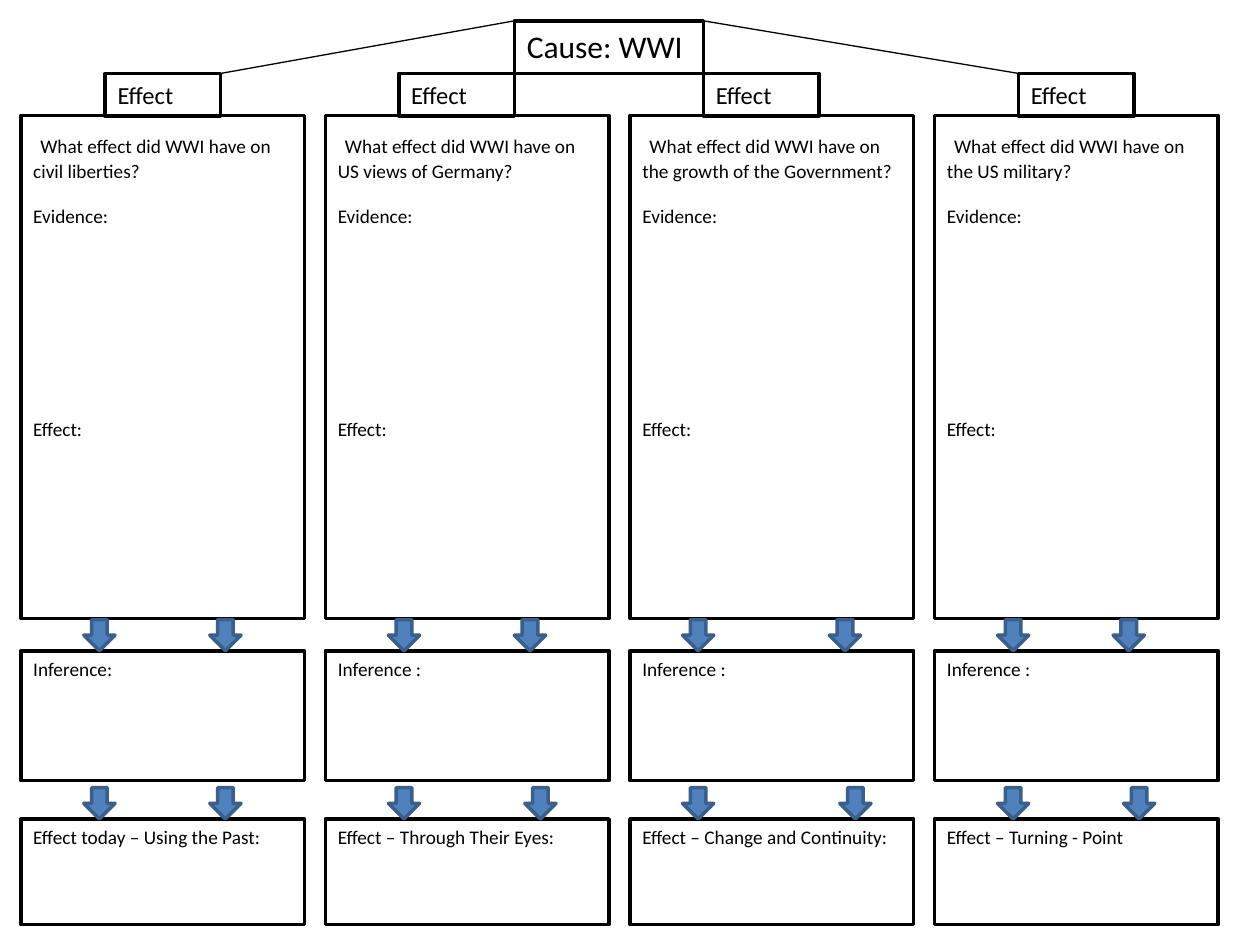
import pptx
import pptx.util
import pptx.dml.color
import pptx.enum.shapes
import pptx.enum.text
import pptx.oxml

Cm, Pt = pptx.util.Cm, pptx.util.Pt
SHAPE = pptx.enum.shapes.MSO_SHAPE

THEME = {
    "font": "Calibri", "ink": "000000", "paper": "FFFFFF",
    "arrow": "4F81BD", "arrow_edge": "3A5F8C",
    "title": 18, "tag": 14, "body": 11, "border": 2, "link": 0.75,
}

CAUSE = "Cause: WWI"
TAG = "Effect"
# Left edges of the tag and of the arrows above each lower box, in cm
COLUMNS = [
    {"question": "What effect did WWI have on civil liberties?",
     "inference": "Inference:", "outcome": "Effect today – Using the Past:",
     "tag": 2.12, "upper_arrows": (1.69, 4.23), "lower_arrows": (1.69, 4.23)},
    {"question": "What effect did WWI have on US views of Germany?",
     "inference": "Inference :", "outcome": "Effect – Through Their Eyes:",
     "tag": 8.04, "upper_arrows": (7.83, 10.37), "lower_arrows": (7.83, 10.58)},
    {"question": "What effect did WWI have on the growth of the Government?",
     "inference": "Inference :", "outcome": "Effect – Change and Continuity:",
     "tag": 14.18, "upper_arrows": (13.76, 16.72), "lower_arrows": (13.76, 16.93)},
    {"question": "What effect did WWI have on the US military?",
     "inference": "Inference :", "outcome": "Effect – Turning - Point",
     "tag": 20.53, "upper_arrows": (20.11, 22.44), "lower_arrows": (20.11, 22.65)},
]

MARGIN, COLUMN_STEP, COLUMN_WIDTH = 0.42, 6.14, 5.72
# Top and height of each row, in cm
QUESTION_ROW, INFERENCE_ROW, OUTCOME_ROW = (2.33, 10.14), (13.12, 2.62), (16.51, 2.13)
TAG_TOP, TAG_WIDTH, TAG_HEIGHT = 1.48, 2.33, 0.86
CAUSE_LEFT, CAUSE_TOP, CAUSE_WIDTH, CAUSE_HEIGHT = 10.37, 0.42, 3.81, 1.06
ARROW_SIZE = 0.63
EVIDENCE_GAP, EFFECT_GAP = 12.5, 108.5


def color(name):
    return pptx.dml.color.RGBColor.from_string(THEME[name])


def add_figure(kind, left, top, width, height, fill, edge):
    figure = slide.shapes.add_shape(kind, Cm(left), Cm(top), Cm(width), Cm(height))
    figure.shadow.inherit = False
    figure.fill.solid()
    figure.fill.fore_color.rgb = color(fill)
    figure.line.color.rgb = color(edge)
    figure.line.width = Pt(THEME["border"])
    return figure


def add_box(left, top, width, height, paragraphs):
    """Each paragraph is (space before in points, [(text, size name), ...])."""
    box = add_figure(SHAPE.RECTANGLE, left, top, width, height, "paper", "ink")
    frame = box.text_frame
    frame.word_wrap = True
    frame.vertical_anchor = pptx.enum.text.MSO_ANCHOR.TOP
    for index, (gap, spans) in enumerate(paragraphs):
        para = frame.add_paragraph() if index else frame.paragraphs[0]
        para.alignment = pptx.enum.text.PP_ALIGN.LEFT
        para.space_before = Pt(gap)
        for text, size in spans:
            span = para.add_run()
            span.text = text
            span.font.name = THEME["font"]
            span.font.size = Pt(THEME[size])
            span.font.color.rgb = color("ink")


def add_link(*ends):
    link = slide.shapes.add_connector(
        pptx.enum.shapes.MSO_CONNECTOR.STRAIGHT, *map(Cm, ends))
    link.line.color.rgb = color("ink")
    link.line.width = Pt(THEME["link"])
    properties = link._element.spPr
    properties.append(pptx.oxml.parse_xml(
        '<a:effectLst xmlns:a="http://schemas.openxmlformats.org/drawingml/2006/main"/>'))


deck = pptx.Presentation()
deck.slide_width, deck.slide_height = Cm(25.4), Cm(19.05)
slide = deck.slides.add_slide(deck.slide_layouts[6])

for index, column in enumerate(COLUMNS):
    left = MARGIN + index * COLUMN_STEP
    question = [
        (0, [(" ", "title"), (column["question"], "body")]),
        (EVIDENCE_GAP, [("Evidence:", "body")]),
        (EFFECT_GAP, [("Effect:", "body")]),
    ]
    for (top, height), paragraphs in (
        (QUESTION_ROW, question),
        (INFERENCE_ROW, [(0, [(column["inference"], "body")])]),
        (OUTCOME_ROW, [(0, [(column["outcome"], "body")])]),
    ):
        add_box(left, top, COLUMN_WIDTH, height, paragraphs)

add_box(CAUSE_LEFT, CAUSE_TOP, CAUSE_WIDTH, CAUSE_HEIGHT, [(0, [(CAUSE, "title")])])

for column in COLUMNS:
    add_box(column["tag"], TAG_TOP, TAG_WIDTH, TAG_HEIGHT, [(0, [(TAG, "tag")])])
    for arrows, row in (("upper_arrows", INFERENCE_ROW), ("lower_arrows", OUTCOME_ROW)):
        for left in column[arrows]:
            add_figure(SHAPE.DOWN_ARROW, left, row[0] - ARROW_SIZE,
                       ARROW_SIZE, ARROW_SIZE, "arrow", "arrow_edge")

add_link(CAUSE_LEFT, CAUSE_TOP, COLUMNS[0]["tag"] + TAG_WIDTH, TAG_TOP)
add_link(COLUMNS[-1]["tag"], TAG_TOP, CAUSE_LEFT + CAUSE_WIDTH, CAUSE_TOP)

deck.save("out.pptx")
